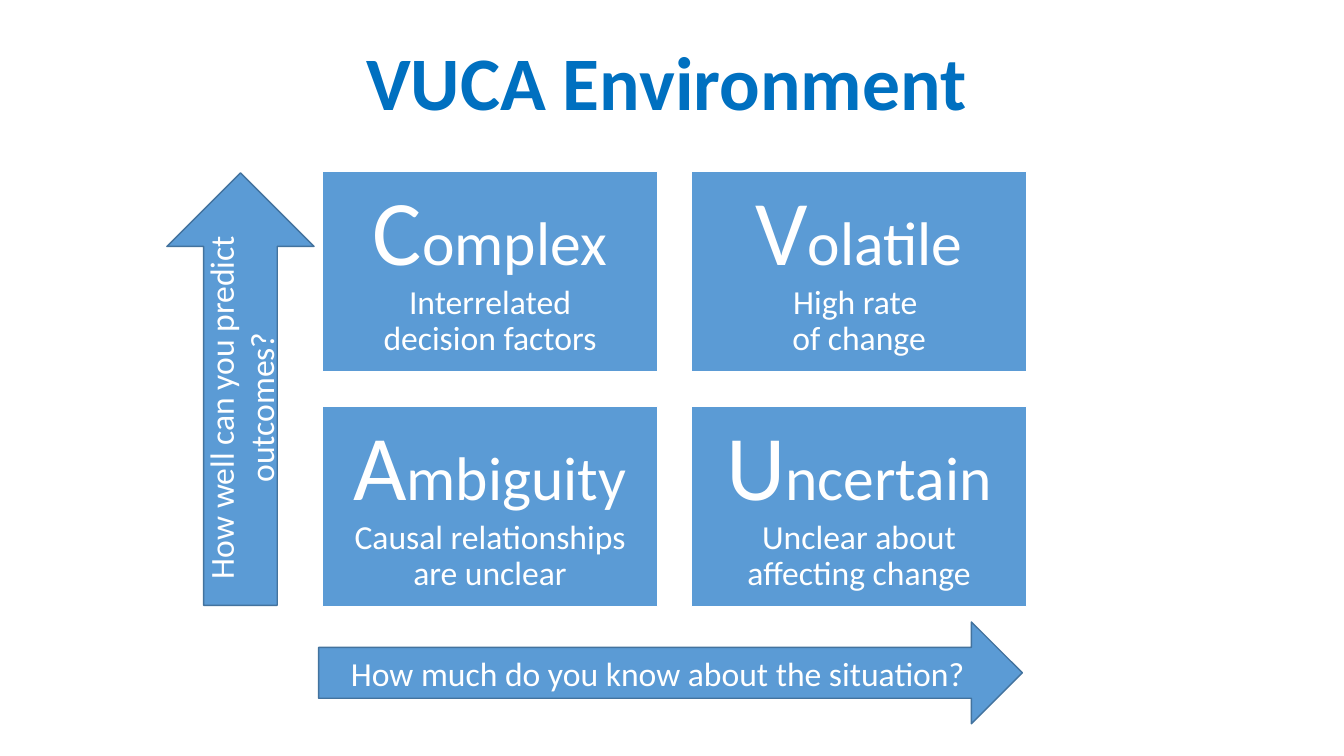
from dataclasses import dataclass

from pptx import Presentation
from pptx.dml.color import RGBColor
from pptx.enum.shapes import MSO_SHAPE
from pptx.enum.text import MSO_ANCHOR, PP_ALIGN
from pptx.util import Emu, Pt

PX = 9144


@dataclass(frozen=True)
class Theme:
    """Colours, font and type sizes of the slide."""
    font: str = "Calibri"
    tile: str = "5B9BD5"
    tile_edge: str = "FFFFFF"
    arrow_edge: str = "43739E"
    title: str = "0070C0"
    text: str = "FFFFFF"
    title_size: int = 54
    initial_size: int = 66
    word_size: int = 44
    body_size: int = 24


THEME = Theme()
QUADRANTS = [
    [("Complex", "Interrelated", "decision factors"),
     ("Volatile", "High rate ", "of change")],
    [("Ambiguity", "Causal relationships", "are unclear"),
     ("Uncertain", "Unclear about", "affecting change")],
]


def px(*lengths):
    """Turn px lengths into EMU."""
    return [Emu(length * PX) for length in lengths]


def apply(target, formats):
    """Set each attribute named in formats on target."""
    for name, value in formats.items():
        setattr(target, name, value)


def add_words(paragraph, words, size, color=THEME.text, bold=False):
    """Append one formatted run to the paragraph."""
    run = paragraph.add_run()
    run.text = words
    apply(run.font, {"name": THEME.font, "size": Pt(size), "bold": bold})
    run.font.color.rgb = RGBColor.from_string(color)


def centred_paragraph(holder, anchor, spacing=1.0, margins=(10, 5)):
    """Prepare the text frame and return its centred first paragraph."""
    across, down = px(*margins)
    frame = holder.text_frame
    apply(frame, {"word_wrap": True, "vertical_anchor": anchor,
                  "margin_left": across, "margin_right": across,
                  "margin_top": down, "margin_bottom": down})
    paragraph = frame.paragraphs[0]
    apply(paragraph, {"alignment": PP_ALIGN.CENTER, "line_spacing": spacing})
    return paragraph


def add_block(slide, preset, box, edge):
    """Draw a filled preset shape with a thin outline."""
    block = slide.shapes.add_shape(preset, *px(*box))
    block.shadow.inherit = False
    block.fill.solid()
    block.fill.fore_color.rgb = RGBColor.from_string(THEME.tile)
    block.line.color.rgb = RGBColor.from_string(edge)
    block.line.width = Pt(1)
    return block


def add_title(slide, box, words):
    """Place the slide title."""
    title = slide.shapes.add_textbox(*px(*box))
    paragraph = centred_paragraph(title, MSO_ANCHOR.TOP, 0.9)
    add_words(paragraph, words, THEME.title_size, THEME.title, True)


def add_quadrant(slide, box, word, *details):
    """Draw one tile with a large initial and its explanation."""
    tile = add_block(slide, MSO_SHAPE.RECTANGLE, box, THEME.tile_edge)
    paragraph = centred_paragraph(tile, MSO_ANCHOR.MIDDLE, 0.9, (28, 28))
    add_words(paragraph, word[0], THEME.initial_size)
    add_words(paragraph, word[1:], THEME.word_size)
    for detail in details:
        paragraph.add_line_break()
        add_words(paragraph, detail, THEME.body_size)


def add_matrix(slide, box, gap):
    """Lay the quadrants out as an even grid inside the box."""
    left, top, width, height = box
    tile_width, tile_height = (width - gap) // 2, (height - gap) // 2
    for row, quadrants in enumerate(QUADRANTS):
        for column, quadrant in enumerate(quadrants):
            tile_box = (left + column * (tile_width + gap),
                        top + row * (tile_height + gap),
                        tile_width, tile_height)
            add_quadrant(slide, tile_box, *quadrant)


def add_axis(slide, box, question, rotation=0):
    """Draw an axis arrow that carries its question."""
    arrow = add_block(slide, MSO_SHAPE.RIGHT_ARROW, box, THEME.arrow_edge)
    arrow.rotation = rotation
    paragraph = centred_paragraph(arrow, MSO_ANCHOR.MIDDLE)
    add_words(paragraph, question, THEME.body_size)


def main():
    """Build and save the slide."""
    deck = Presentation()
    deck.slide_width, deck.slide_height = px(1333, 750)
    slide = deck.slides.add_slide(deck.slide_layouts[6])
    add_matrix(slide, (320, 170, 698, 432), 34)
    add_axis(slide, (316, 617, 698, 101),
             "How much do you know about the situation?")
    add_axis(slide, (24, 313, 429, 146),
             "How well can you predict outcomes?", 270)
    add_title(slide, (55, 40, 1212, 145), "VUCA Environment")
    deck.save("out.pptx")


if __name__ == "__main__":
    main()
